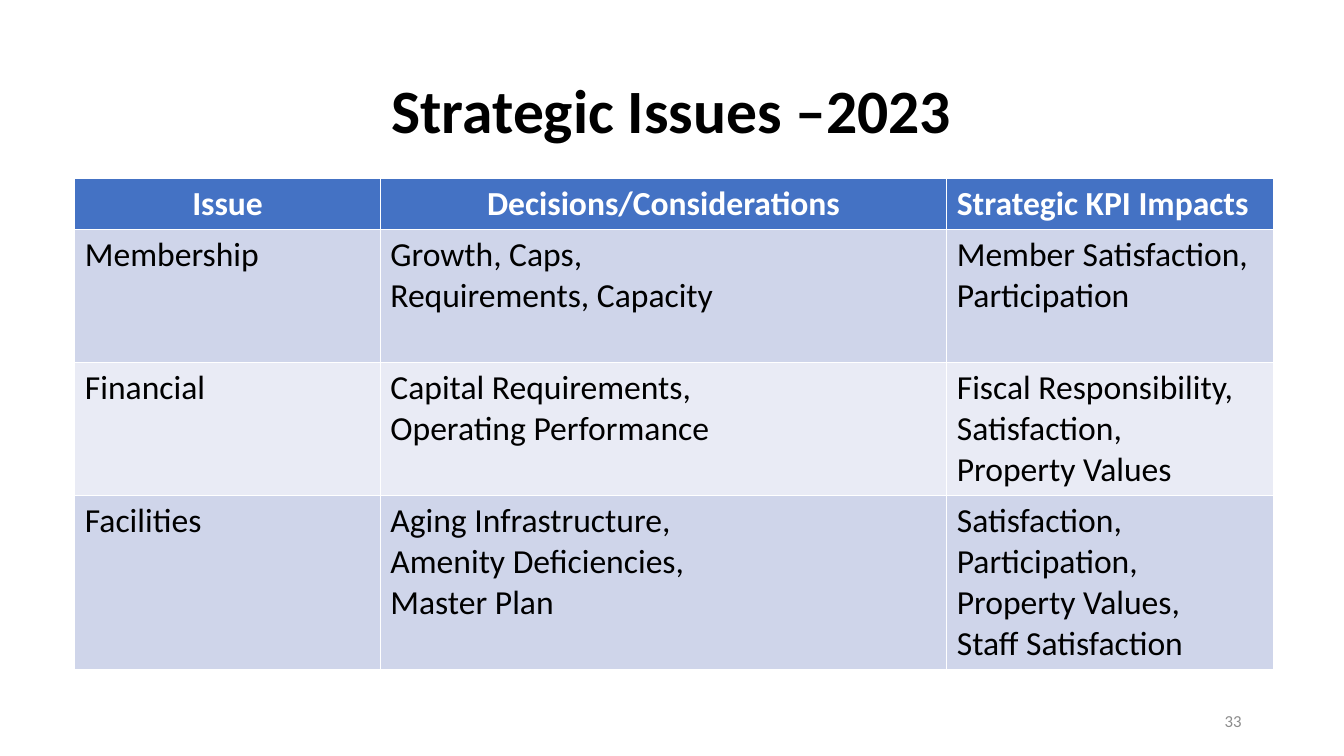
from pptx import Presentation
from pptx.dml.color import RGBColor
from pptx.enum.text import MSO_ANCHOR, PP_ALIGN
from pptx.util import Pt

LEFT, CENTER, RIGHT = PP_ALIGN.LEFT, PP_ALIGN.CENTER, PP_ALIGN.RIGHT
MIDDLE = MSO_ANCHOR.MIDDLE
BLACK = RGBColor(0x00, 0x00, 0x00)
WHITE = RGBColor(0xFF, 0xFF, 0xFF)
GRAY = RGBColor(0x8C, 0x8C, 0x8C)
BLUE = RGBColor(0x44, 0x72, 0xC4)
BANDS = [RGBColor(0xCF, 0xD5, 0xEA), RGBColor(0xE9, 0xEB, 0xF5)]

TITLE = {"name": "Calibri", "size": Pt(44), "bold": True}
HEADER = {"name": "Calibri", "size": Pt(24), "bold": True}
BODY = {"name": "Calibri", "size": Pt(24), "bold": False}
NUMBER = {"name": "Calibri", "size": Pt(12), "bold": False}

COLUMN_WIDTHS = [218.2, 404.6, 233.3]
ROW_HEIGHTS = [36.5, 95.1, 95.1, 124.4]
HEADER_ALIGNMENTS = [CENTER, CENTER, LEFT]
ISSUES = [
    ["Issue", "Decisions/Considerations", "Strategic KPI Impacts"],
    ["Membership", "Growth, Caps,\vRequirements, Capacity",
     "Member Satisfaction, Participation"],
    ["Financial", "Capital Requirements,\vOperating Performance",
     "Fiscal Responsibility, Satisfaction,\nProperty Values"],
    ["Facilities", "Aging Infrastructure,\vAmenity Deficiencies,\vMaster Plan",
     "Satisfaction,\nParticipation,\nProperty Values,\nStaff Satisfaction"],
]


def write_text(frame, text, style, color, alignment, spacing=1.0):
    frame.text = text
    for para in frame.paragraphs:
        para.alignment = alignment
        para.line_spacing = spacing
        for span in para.runs:
            for name, value in style.items():
                setattr(span.font, name, value)
            span.font.color.rgb = color


def add_label(page, box, text, style, color, alignment, spacing=1.0):
    frame = page.shapes.add_textbox(*map(Pt, box)).text_frame
    frame.word_wrap = True
    frame.vertical_anchor = MIDDLE
    write_text(frame, text, style, color, alignment, spacing)


def add_issue_table(page, left, top):
    width, height = sum(COLUMN_WIDTHS), sum(ROW_HEIGHTS)
    table = page.shapes.add_table(len(ISSUES), len(COLUMN_WIDTHS),
                                  Pt(left), Pt(top), Pt(width), Pt(height)).table
    for column, column_width in zip(table.columns, COLUMN_WIDTHS):
        column.width = Pt(column_width)
    for row_index, texts in enumerate(ISSUES):
        table.rows[row_index].height = Pt(ROW_HEIGHTS[row_index])
        is_header = row_index == 0
        fill = BLUE if is_header else BANDS[(row_index - 1) % 2]
        style, color = (HEADER, WHITE) if is_header else (BODY, BLACK)
        for column_index, text in enumerate(texts):
            cell = table.cell(row_index, column_index)
            cell.fill.solid()
            cell.fill.fore_color.rgb = fill
            alignment = HEADER_ALIGNMENTS[column_index] if is_header else LEFT
            write_text(cell.text_frame, text, style, color, alignment)


def main():
    deck = Presentation()
    deck.slide_width, deck.slide_height = Pt(960), Pt(540)
    page = deck.slides.add_slide(deck.slide_layouts[6])
    add_label(page, (66, 28.8, 828, 104.4), "Strategic Issues –2023",
              TITLE, BLACK, CENTER, 0.9)
    add_issue_table(page, 53.5, 127.6)
    add_label(page, (678, 500.5, 216, 28.8), "33", NUMBER, GRAY, RIGHT)
    deck.save("out.pptx")


if __name__ == "__main__":
    main()
